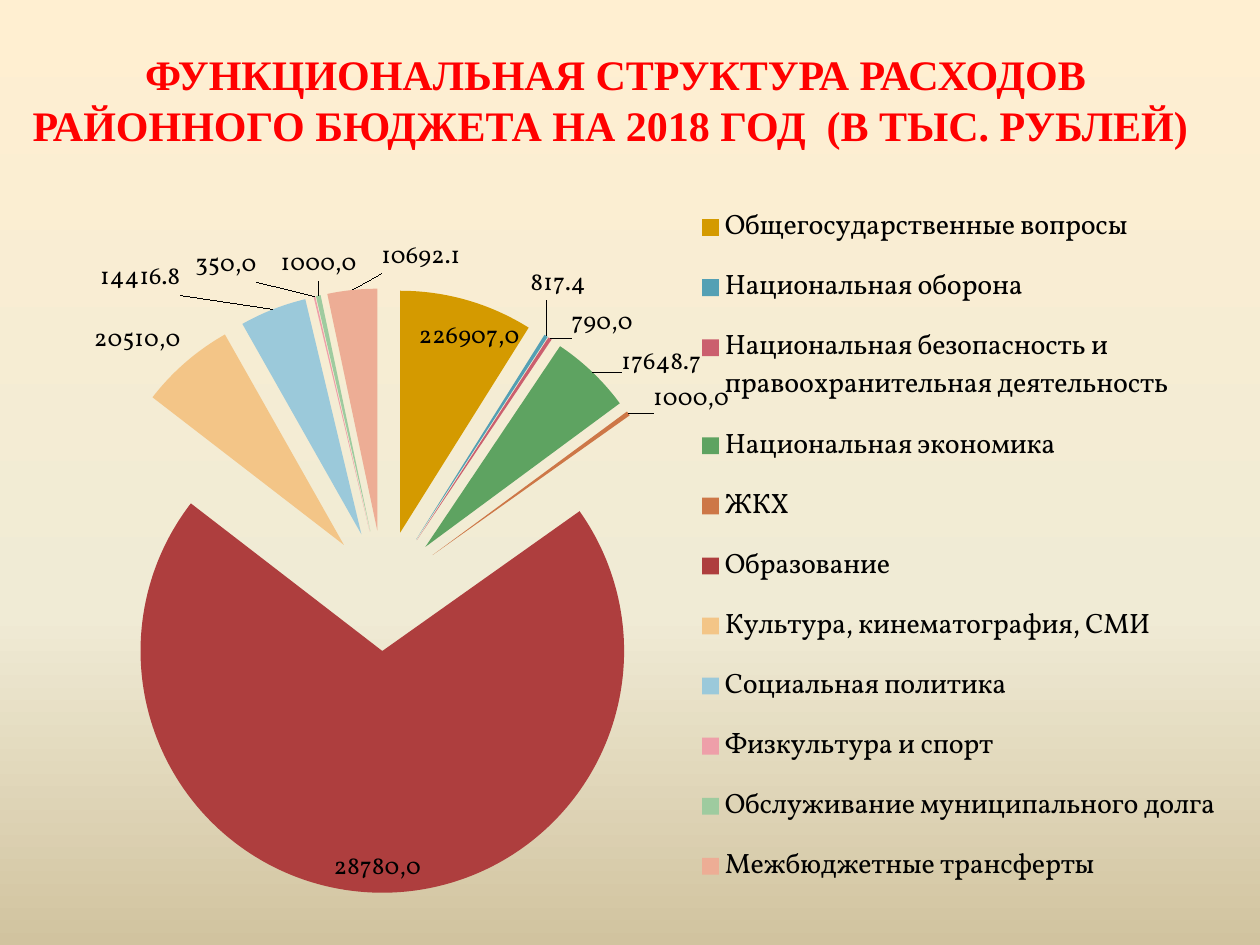
import copy
import dataclasses
import typing

import pptx
import pptx.chart.data
import pptx.dml.color
import pptx.enum.chart
import pptx.enum.text
import pptx.oxml
import pptx.oxml.ns
import pptx.util

Cm = pptx.util.Cm
Pt = pptx.util.Pt
RGBColor = pptx.dml.color.RGBColor
LabelPosition = pptx.enum.chart.XL_LABEL_POSITION

RED = RGBColor(0xFF, 0x00, 0x00)
BLACK = RGBColor(0x00, 0x00, 0x00)
GOLD = RGBColor(0xD4, 0x9A, 0x00)
BLUE = RGBColor(0x54, 0xA0, 0xB4)
ROSE = RGBColor(0xCB, 0x5F, 0x6E)
GREEN = RGBColor(0x5E, 0xA3, 0x61)
ORANGE = RGBColor(0xCD, 0x77, 0x47)
BRICK = RGBColor(0xAE, 0x3E, 0x3E)
LIGHT_GOLD = RGBColor(0xF3, 0xC5, 0x87)
LIGHT_BLUE = RGBColor(0x9B, 0xC9, 0xDA)
LIGHT_ROSE = RGBColor(0xEE, 0x9F, 0xA9)
LIGHT_GREEN = RGBColor(0x9E, 0xCB, 0x9F)
LIGHT_ORANGE = RGBColor(0xED, 0xAD, 0x95)

BACKGROUND_STOPS = {
    0: RGBColor(0xFF, 0xEF, 0xD1),
    0.65: RGBColor(0xF0, 0xEB, 0xD5),
    1: RGBColor(0xD1, 0xC3, 0x9F),
}
TITLE = "ФУНКЦИОНАЛЬНАЯ СТРУКТУРА РАСХОДОВ РАЙОННОГО БЮДЖЕТА НА 2018 ГОД  (В ТЫС. РУБЛЕЙ) "
TITLE_FONT = {"name": "Times New Roman", "size": Pt(24), "bold": True}
CHART_FONT = {"name": "Vollkorn", "size": Pt(10)}
LABEL_FONT = {"name": "Vollkorn", "size": Pt(14)}
LEGEND_FONT = {"name": "Vollkorn", "size": Pt(16)}

CHART_WIDTH, CHART_HEIGHT = Cm(24.41), Cm(14.68)
EXPLOSION = 25


@dataclasses.dataclass(frozen=True)
class Expense:
    name: str
    value: float
    color: RGBColor
    label: str = ""  # replaces the value when given
    shift: typing.Optional[tuple[float, float]] = None  # label offset in cm
    position: LabelPosition = LabelPosition.OUTSIDE_END


EXPENSES = [
    Expense("Общегосударственные вопросы", 28780, GOLD, "226907,0", (-1.01, 1.23)),
    Expense("Национальная оборона", 817.4, BLUE, shift=(-0.39, -0.58)),
    Expense("Национальная безопасность и правоохранительная деятельность",
            790, ROSE, "790,0", (0.35, 0.16)),
    Expense("Национальная экономика", 17648.7, GREEN, shift=(0.48, 0.26)),
    Expense("ЖКХ", 1000, ORANGE, "1000,0", (0.38, 0.14)),
    Expense("Образование", 226907, BRICK, "28780,0", position=LabelPosition.INSIDE_END),
    Expense("Культура, кинематография, СМИ", 20510, LIGHT_GOLD, "20510,0"),
    Expense("Социальная политика", 14416.8, LIGHT_BLUE, shift=(-1.81, -0.14)),
    Expense("Физкультура и спорт", 350, LIGHT_ROSE, "350,0", (-1.13, -0.14)),
    Expense("Обслуживание муниципального долга", 1000, LIGHT_GREEN, "1000,0", (0.81, -0.14)),
    Expense("Межбюджетные трансферты", 10692.1, LIGHT_ORANGE, shift=(2.2, -0.18)),
]


def format_font(font, values: dict, color: RGBColor = BLACK) -> None:
    for attribute, value in values.items():
        setattr(font, attribute, value)
    font.color.rgb = color


def manual_layout(**settings):
    """Return a c:layout element with the given settings in schema order."""
    children = "".join(f'<c:{key} val="{value}"/>' for key, value in settings.items())
    return pptx.oxml.parse_xml(
        f'<c:layout {pptx.oxml.ns.nsdecls("c")}>'
        f"<c:manualLayout>{children}</c:manualLayout></c:layout>")


def replace_layout(parent, layout, predecessor) -> None:
    for old_layout in parent.xpath("./c:layout"):
        parent.remove(old_layout)
    if predecessor is None:
        parent.insert(0, layout)
    else:
        predecessor.addnext(layout)


def paint_background(slide) -> None:
    fill = slide.background.fill
    fill.gradient()
    fill.gradient_angle = 270
    last_stop = slide.element.xpath(".//a:gs")[-1]
    last_stop.addnext(copy.deepcopy(last_stop))
    for stop, (position, color) in zip(fill.gradient_stops, BACKGROUND_STOPS.items()):
        stop.position = position
        stop.color.rgb = color


def add_title(slide) -> None:
    title = slide.shapes.title
    title.left, title.top, title.width, title.height = Cm(0), Cm(0.41), Cm(24.82), Cm(3.18)
    title.text_frame.vertical_anchor = pptx.enum.text.MSO_ANCHOR.MIDDLE
    paragraph = title.text_frame.paragraphs[0]
    paragraph.alignment = pptx.enum.text.PP_ALIGN.CENTER
    run = paragraph.add_run()
    run.text = TITLE
    format_font(run.font, TITLE_FONT, RED)


def format_slice(point, expense: Expense) -> None:
    point.format.fill.solid()
    point.format.fill.fore_color.rgb = expense.color
    label = point.data_label
    if expense.label:
        run = label.text_frame.paragraphs[0].add_run()
        run.text = expense.label
        format_font(run.font, LABEL_FONT)
    else:
        format_font(label.font, LABEL_FONT)
    label.position = expense.position


def shift_label(series, index: int, shift: tuple[float, float]) -> None:
    label_index = series._element.xpath(f"./c:dLbls/c:dLbl/c:idx[@val='{index}']")[0]
    x, y = Cm(shift[0]) / CHART_WIDTH, Cm(shift[1]) / CHART_HEIGHT
    replace_layout(label_index.getparent(), manual_layout(x=x, y=y), label_index)


def add_expense_chart(slide) -> None:
    data = pptx.chart.data.CategoryChartData()
    data.categories = [expense.name for expense in EXPENSES]
    data.add_series("Series 1", [expense.value for expense in EXPENSES])
    chart = slide.shapes.add_chart(
        pptx.enum.chart.XL_CHART_TYPE.PIE,
        Cm(0.41), Cm(3.76), CHART_WIDTH, CHART_HEIGHT, data).chart
    chart.has_title = False
    format_font(chart.font, CHART_FONT)
    chart.plots[0].vary_by_categories = True

    # Slices and their labels
    series = chart.plots[0].series[0]
    series.data_labels.show_value = True
    format_font(series.data_labels.font, LABEL_FONT)
    for index, expense in enumerate(EXPENSES):
        format_slice(series.points[index], expense)
        if expense.shift:
            shift_label(series, index, expense.shift)
    explosion = pptx.oxml.parse_xml(
        f'<c:explosion {pptx.oxml.ns.nsdecls("c")} val="{EXPLOSION}"/>')
    series._element.xpath("./c:dPt")[0].addprevious(explosion)

    # Legend and plot area
    chart.has_legend = True
    legend = chart.legend
    legend.position = pptx.enum.chart.XL_LEGEND_POSITION.RIGHT
    legend.include_in_layout = False
    format_font(legend.font, LEGEND_FONT)
    replace_layout(
        legend._element,
        manual_layout(xMode="edge", yMode="edge", x=0.55, y=0, w=0.45, h=0.99),
        legend._element.xpath("./c:legendPos")[0])
    replace_layout(
        chart._chartSpace.xpath(".//c:plotArea")[0],
        manual_layout(layoutTarget="inner", xMode="edge", yMode="edge",
                      x=0.03, y=0.14, w=0.54, h=0.83),
        None)


def main() -> None:
    presentation = pptx.Presentation()
    presentation.slide_width, presentation.slide_height = Cm(25.4), Cm(19.05)
    slide = presentation.slides.add_slide(presentation.slide_layouts.get_by_name("Title Only"))
    paint_background(slide)
    add_title(slide)
    add_expense_chart(slide)
    presentation.save("out.pptx")


if __name__ == "__main__":
    main()
